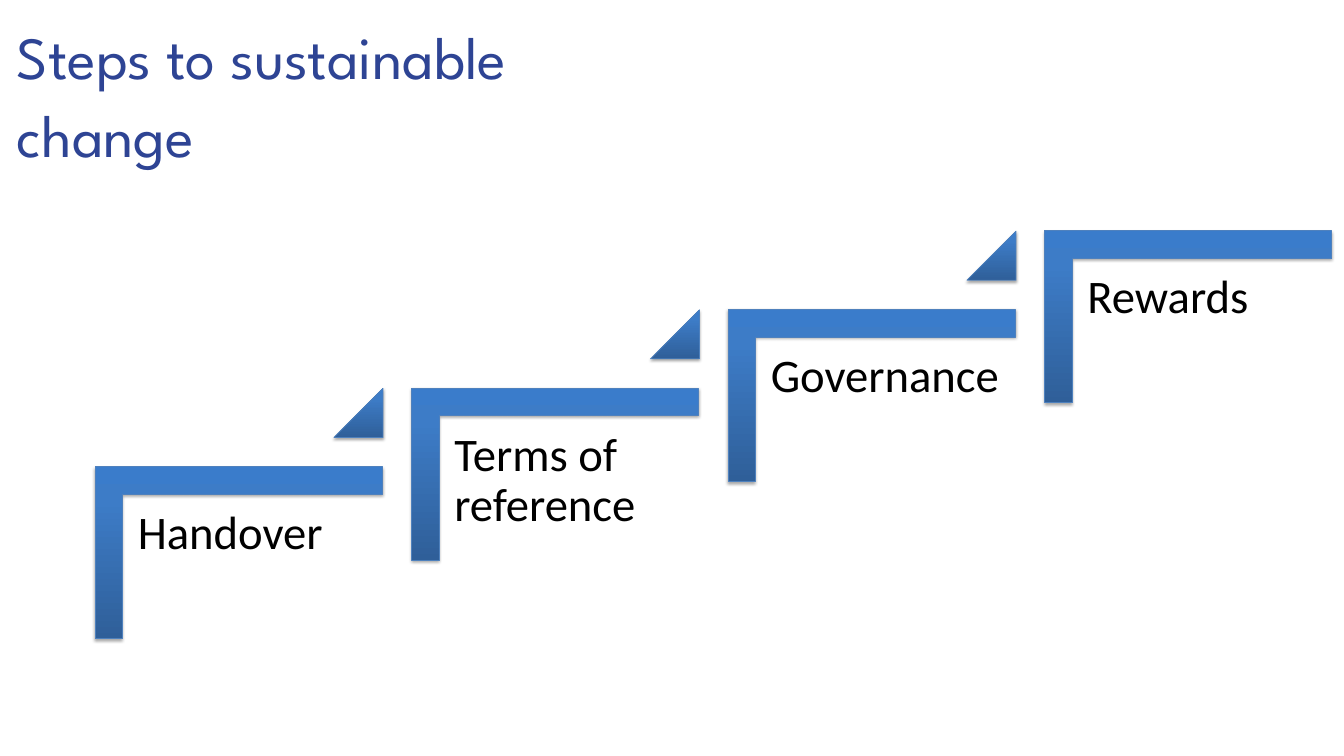
from pptx import Presentation, util as u
from pptx.dml.color import RGBColor
from pptx.enum import shapes, text
from pptx.oxml import parse_xml

BLACK = RGBColor(0x00, 0x00, 0x00)
TITLE_BLUE = RGBColor(0x2E, 0x44, 0x94)
OUTLINE_BLUE = RGBColor(0x4F, 0x81, 0xBD)
SHADE_DARK = RGBColor(0x2F, 0x5F, 0x99)
SHADE_MIDDLE = RGBColor(0x3D, 0x7C, 0xC7)
SHADE_LIGHT = RGBColor(0x3A, 0x7C, 0xCB)
NAMESPACE = 'xmlns:a="http://schemas.openxmlformats.org/drawingml/2006/main"'

STEPS = ["Handover", "Terms of reference", "Governance", "Rewards"]
STEP_RIGHT, STEP_UP = 4.71, 1.17


def add_shaded_shape(kind, left, top, width, height, adjustments):
    shape = slide.shapes.add_shape(
        kind, u.Inches(left), u.Inches(top), u.Inches(width), u.Inches(height))
    for index, value in enumerate(adjustments):
        shape.adjustments[index] = value
    shape.line.color.rgb = OUTLINE_BLUE
    shape.line.width = u.Pt(0.75)
    stops = "".join(
        f'<a:gs pos="{position * 1000}"><a:srgbClr val="{color}"/></a:gs>'
        for position, color in [(0, SHADE_DARK), (80, SHADE_MIDDLE), (100, SHADE_LIGHT)])
    properties = shape._element.spPr
    properties.insert(2, parse_xml(
        f'<a:gradFill {NAMESPACE} rotWithShape="0"><a:gsLst>{stops}</a:gsLst>'
        '<a:lin ang="16200000" scaled="0"/></a:gradFill>'))
    properties.append(parse_xml(
        f'<a:effectLst {NAMESPACE}><a:outerShdw blurRad="{u.Pt(3.1)}" dist="{u.Pt(1.8)}" '
        f'dir="5400000" rotWithShape="0"><a:srgbClr val="{BLACK}">'
        '<a:alpha val="35000"/></a:srgbClr></a:outerShdw></a:effectLst>'))
    return shape


def write_text(shape, words, margin, spacing, font_format):
    frame = shape.text_frame
    frame_format = {
        "word_wrap": True, "auto_size": text.MSO_AUTO_SIZE.NONE,
        "vertical_anchor": text.MSO_ANCHOR.TOP,
        "margin_left": margin, "margin_top": margin,
        "margin_right": margin, "margin_bottom": margin}
    for name, value in frame_format.items():
        setattr(frame, name, value)
    paragraph = frame.paragraphs[0]
    paragraph.alignment = text.PP_ALIGN.LEFT
    paragraph.line_spacing = spacing
    run = paragraph.add_run()
    run.text = words
    for name, value in font_format.items():
        setattr(run.font, name, value)
    run.font.color.rgb = TITLE_BLUE if shape.is_placeholder else BLACK


presentation = Presentation()
presentation.slide_width = u.Inches(20)
presentation.slide_height = u.Inches(11.25)
slide = presentation.slides.add_slide(presentation.slide_layouts[5])

title = slide.shapes.title
title_place = {"left": 0.25, "top": 0.21, "width": 8.31, "height": 3.49}
for name, value in title_place.items():
    setattr(title, name, u.Inches(value))
write_text(title, "Steps to sustainable change", 0, u.Pt(83.2),
           {"name": "League Spartan", "size": u.Pt(64)})

for number, step in enumerate(STEPS):
    right, up = number * STEP_RIGHT, number * STEP_UP
    corner = add_shaded_shape(shapes.MSO_SHAPE.CORNER, 2.27 + right, 6.09 - up,
                              2.56, 4.27, [0.16, 0.16])
    corner.rotation = 90
    label = slide.shapes.add_textbox(u.Inches(1.84 + right), u.Inches(7.37 - up),
                                     u.Inches(3.85), u.Inches(3.38))
    write_text(label, step, u.Inches(0.21), 0.9, {"name": "Calibri", "size": u.Pt(50)})
    if number < len(STEPS) - 1:
        add_shaded_shape(shapes.MSO_SHAPE.ISOSCELES_TRIANGLE, 4.97 + right, 5.78 - up,
                         0.73, 0.73, [1])

presentation.save("out.pptx")
